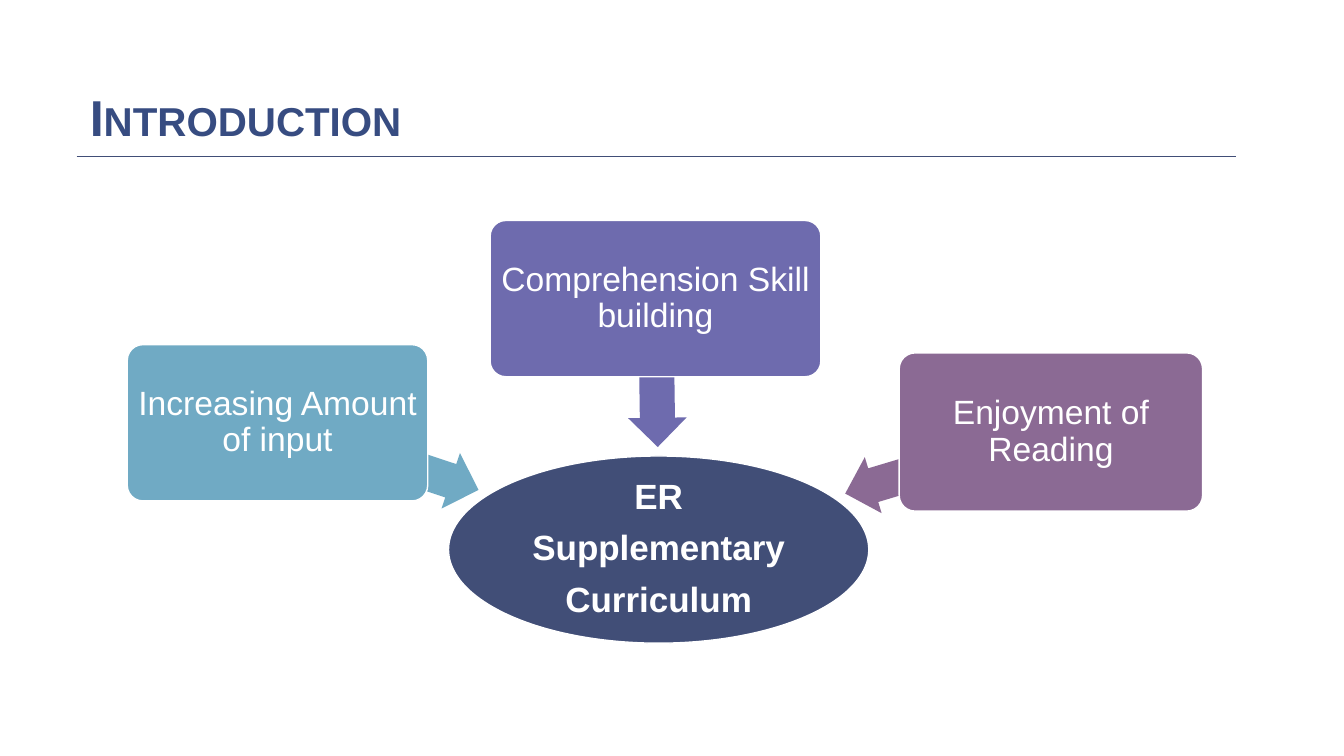
from pptx import Presentation
from pptx.dml.color import RGBColor
from pptx.enum import shapes, text
from pptx.oxml import xmlchemy
from pptx.util import Pt

WHITE, NAVY = "FFFFFF", "414E77"
SHAPE = shapes.MSO_SHAPE


def color(hex_value):
    return RGBColor.from_string(hex_value)


def add_block(kind, bounds, fill, lines=(), size=24, bold=False, inset=3.6):
    """Add a filled shape; one with text also gets a white outline."""
    block = page.shapes.add_shape(kind, *[Pt(value) for value in bounds])
    block.shadow.inherit = False
    block.fill.solid()
    block.fill.fore_color.rgb = color(fill)
    if not lines:
        block.line.fill.background()
        return block
    block.line.color.rgb = color(WHITE)
    block.line.width = Pt(1)
    frame = block.text_frame
    frame.word_wrap = True
    frame.vertical_anchor = text.MSO_ANCHOR.MIDDLE
    frame.margin_left = frame.margin_right = Pt(inset)
    frame.margin_top = frame.margin_bottom = Pt(inset)
    frame.text = "\n".join(lines)
    for para in frame.paragraphs:
        para.alignment = text.PP_ALIGN.CENTER
        para.line_spacing = 0.9
        para.space_after = Pt(10)
        for span in para.runs:
            span.font.name = "Arial"
            span.font.size = Pt(size)
            span.font.bold = bold
            span.font.color.rgb = color(WHITE)
    return block


deck = Presentation()
deck.slide_width, deck.slide_height = Pt(960), Pt(540)
page = deck.slides.add_slide(deck.slide_layouts[6])

# Title and rule
title = page.shapes.add_textbox(Pt(54.7), Pt(37.4), Pt(771), Pt(72.7))
frame = title.text_frame
frame.word_wrap = True
frame.vertical_anchor = text.MSO_ANCHOR.BOTTOM
frame.margin_left = frame.margin_right = Pt(9.4)
frame.margin_top = frame.margin_bottom = Pt(5)
frame.text = "Introduction"
para = frame.paragraphs[0]
para.line_spacing = 0.85
span = para.runs[0]
span.font.name = "Arial"
span.font.size = Pt(36)
span.font.bold = True
span.font.color.rgb = color("374C81")
span.font._element.set("cap", "small")

rule = page.shapes.add_connector(
    shapes.MSO_CONNECTOR.STRAIGHT, Pt(54.7), Pt(111.4), Pt(882.7), Pt(111.4))
rule.line.color.rgb = color(NAVY)
rule.line.width = Pt(0.5)
rule._element.spPr.append(xmlchemy.OxmlElement("a:effectLst"))

# Hub
add_block(SHAPE.OVAL, (320.4, 325.7, 300.2, 133.7), NAVY,
          ("ER", "Supplementary", "Curriculum"), 25, True, 1.4)

# Factors: label, colour, card bounds, arrow bounds, arrow rotation
factors = [
    ("Increasing Amount of input", "70AAC4",
     (90.9, 246.2, 214.6, 111.6), (194.4, 305.3, 151.2, 41.8), 198.3),
    ("Comprehension Skill building", "6E6BAE",
     (350.1, 157.5, 236.2, 111.6), (416.2, 245.5, 105.8, 41.8), 269.2),
    ("Enjoyment of Reading", "8B6A94",
     (642.3, 252.1, 216.7, 113), (600.5, 309.6, 153.4, 41.8), 343.3),
]
for label, fill, card_bounds, arrow_bounds, angle in factors:
    arrow = add_block(SHAPE.LEFT_ARROW, arrow_bounds, fill)
    arrow.rotation = angle
    arrow.adjustments[0] = 0.6
    arrow.adjustments[1] = 0.5
    card = add_block(SHAPE.ROUNDED_RECTANGLE, card_bounds, fill, [label])
    card.adjustments[0] = 0.1

deck.save("out.pptx")
